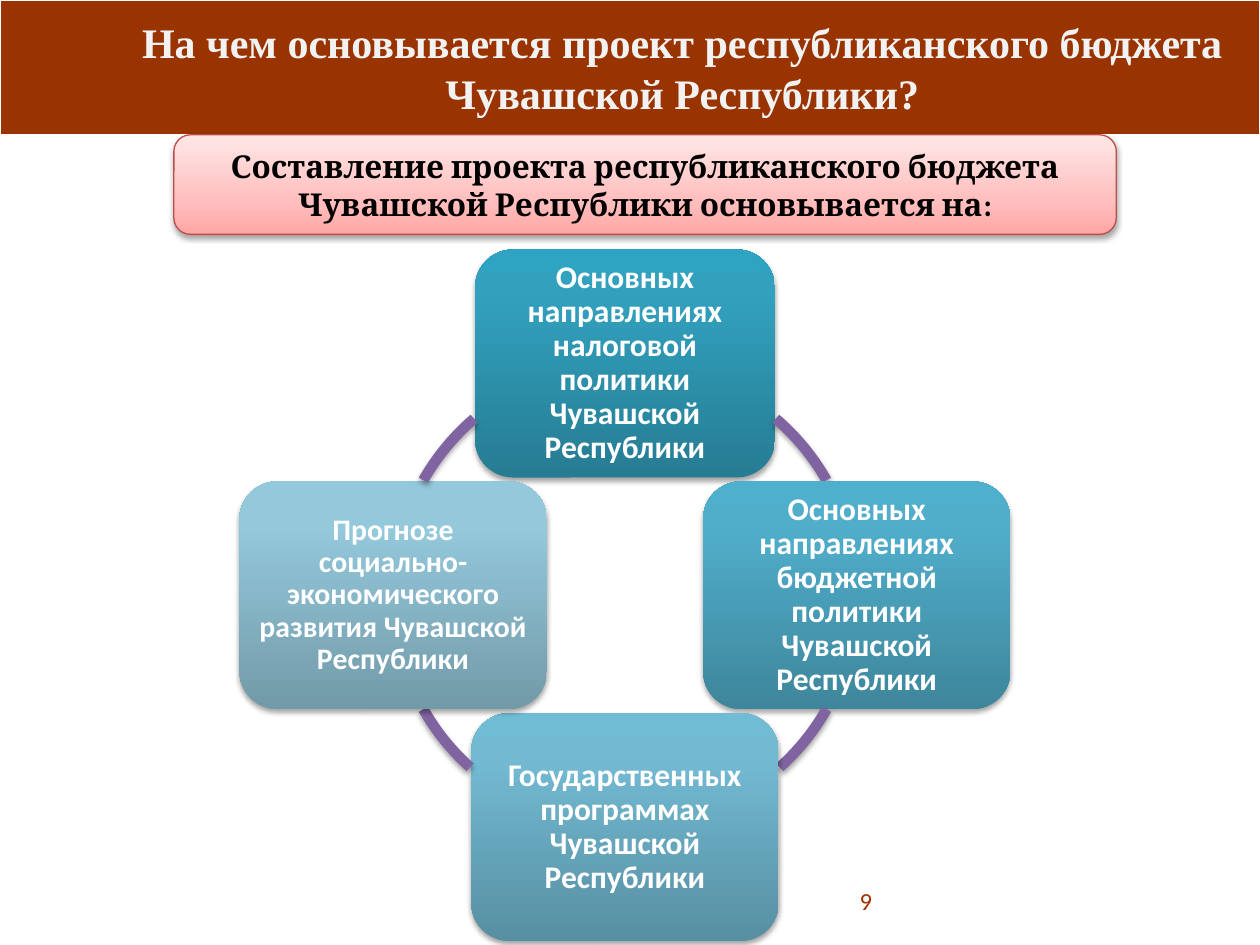
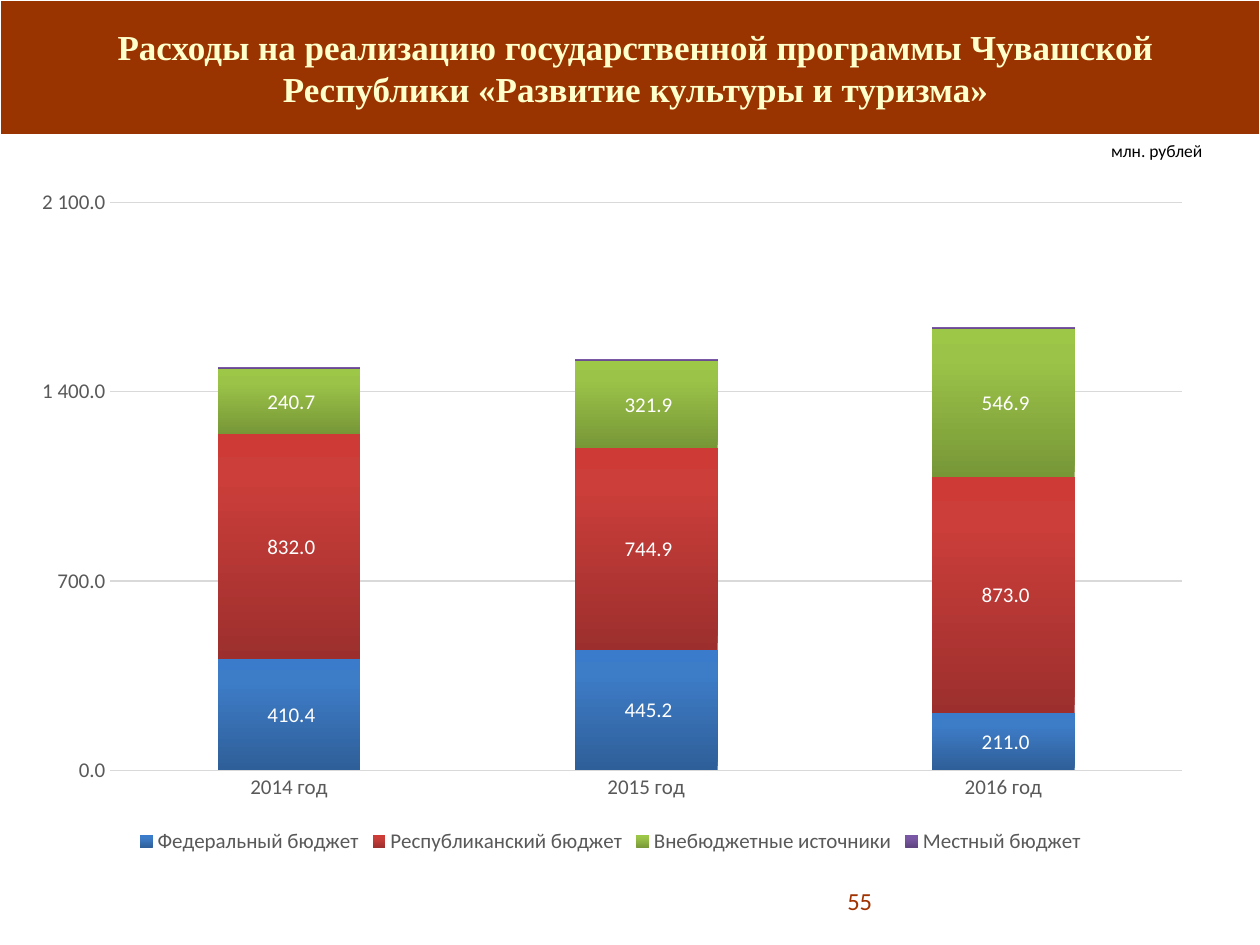
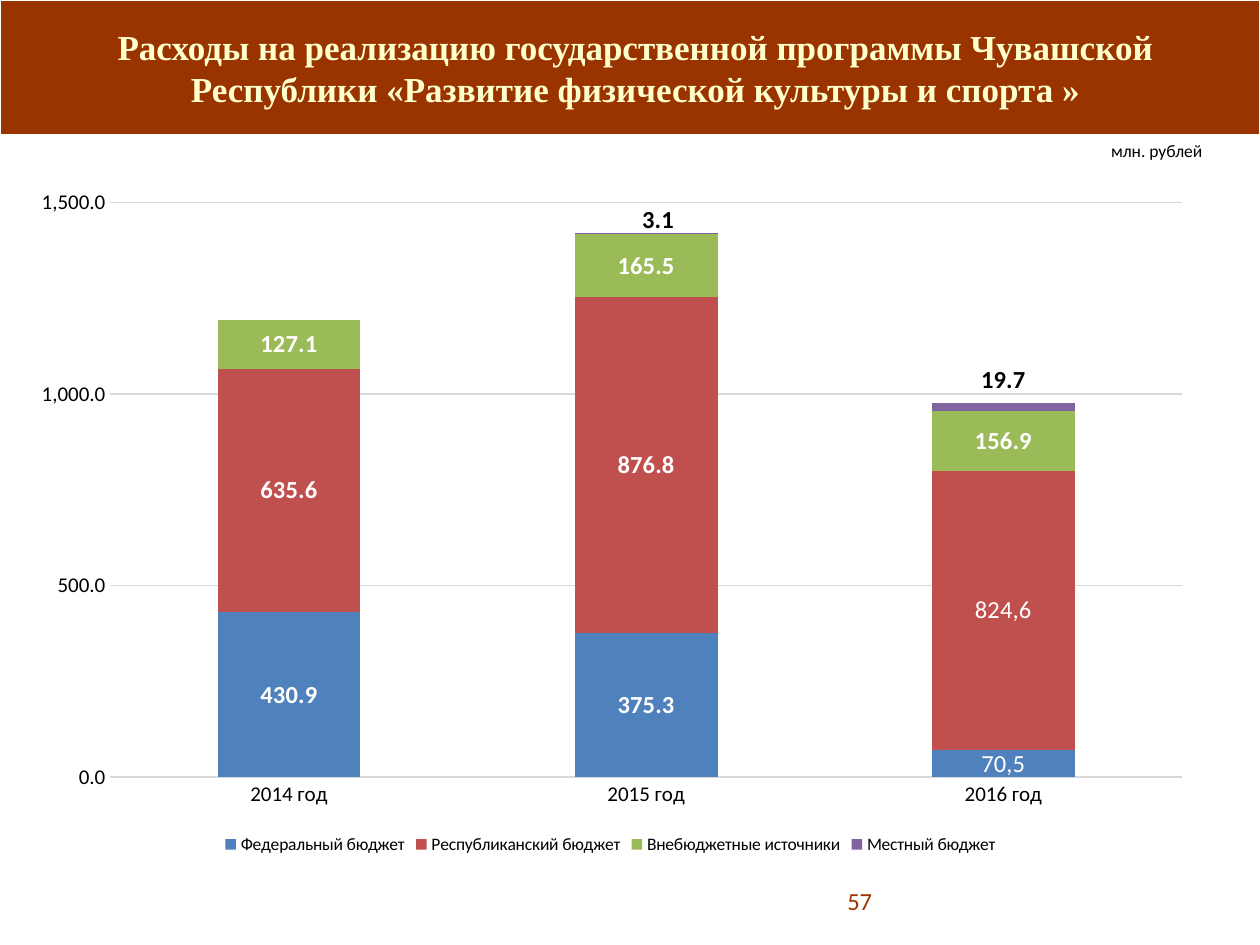
"""Builds three budget slides: a cycle of four foundations and two stacked spending charts."""
from copy import deepcopy

from pptx import Presentation
from pptx.chart.data import CategoryChartData
from pptx.dml.color import RGBColor
from pptx.enum.chart import XL_CHART_TYPE, XL_LEGEND_POSITION, XL_TICK_MARK
from pptx.enum.shapes import MSO_SHAPE
from pptx.enum.text import MSO_ANCHOR, PP_ALIGN
from pptx.oxml import parse_xml
from pptx.oxml.ns import nsdecls, qn
from pptx.util import Pt

PX = 9144
COLORS = {
    "band": "993300", "white": "FFFFFF", "black": "000000", "page": "A03202",
    "title_light": "F2F2F2", "title_cream": "FFFFCC", "arc": "8064A2",
    "banner_line": "BF4C48", "grid": "D9D9D9", "gray": "595959",
}
BANNER_STOPS = [(0, "FFA6A5"), (0.35, "FFC0BF"), (1, "FFE7E7")]
PLOT_LAYOUT = (
    "<c:layout %s><c:manualLayout><c:layoutTarget val='inner'/>"
    "<c:xMode val='edge'/><c:yMode val='edge'/><c:x val='0.08'/><c:y val='0.04'/>"
    "<c:w val='0.9'/><c:h val='{height}'/></c:manualLayout></c:layout>" % nsdecls("c")
)
LABEL_LAYOUT = (
    "<c:layout %s><c:manualLayout><c:x val='{x}'/><c:y val='{y}'/>"
    "</c:manualLayout></c:layout>" % nsdecls("c")
)
SHADOW = (
    "<a:outerShdw %s blurRad='39370' dist='22860' dir='5400000' rotWithShape='0'>"
    "<a:srgbClr val='000000'><a:alpha val='35000'/></a:srgbClr></a:outerShdw>" % nsdecls("a")
)


def write_text(frame, text, size=18, color="white", font="Calibri", bold=False,
               align=PP_ALIGN.CENTER, anchor=MSO_ANCHOR.MIDDLE, margins=(10, 5), spacing=1.0):
    frame.word_wrap = True
    frame.vertical_anchor = anchor
    frame.margin_left = frame.margin_right = margins[0] * PX
    frame.margin_top = frame.margin_bottom = margins[1] * PX
    paragraph = frame.paragraphs[0]
    paragraph.alignment = align
    paragraph.line_spacing = spacing
    run = paragraph.add_run()
    run.text = text
    run.font.size = Pt(size)
    run.font.name = font
    run.font.bold = bold
    run.font.color.rgb = RGBColor.from_string(COLORS[color])


def set_gradient(fill, element, stops):
    fill.gradient()
    fill.gradient_angle = 90
    stop_list = element.find(".//" + qn("a:gsLst"))
    stop_list.append(deepcopy(stop_list[-1]))
    for stop, (position, color) in zip(fill.gradient_stops, stops):
        stop.position = position
        stop.color.rgb = RGBColor.from_string(color)


presentation = Presentation()
presentation.slide_width = 1000 * PX
presentation.slide_height = 750 * PX

pages = [
    ("На чем основывается проект республиканского бюджета Чувашской Республики?",
     917, 24, "title_light", "9"),
    ("Расходы на реализацию государственной программы Чувашской Республики "
     "«Развитие культуры и туризма»", 843, 20, "title_cream", "55"),
    ("Расходы на реализацию государственной программы Чувашской Республики "
     "«Развитие физической культуры и спорта »", 843, 20, "title_cream", "57"),
]
slides = []
for title, width, size, color, number in pages:
    slide = presentation.slides.add_slide(presentation.slide_layouts[6])
    slides.append(slide)
    band = slide.shapes.add_shape(MSO_SHAPE.RECTANGLE, 0, 0, 1000 * PX, 107 * PX)
    band.shadow.inherit = False
    band.fill.solid()
    band.fill.fore_color.rgb = RGBColor.from_string(COLORS["band"])
    band.line.color.rgb = RGBColor.from_string(COLORS["white"])
    band.line.width = Pt(0.75)
    title_box = slide.shapes.add_textbox(83 * PX, 0, width * PX, 107 * PX)
    write_text(title_box.text_frame, title, size=size, color=color,
               font="Times New Roman", bold=True)
    number_box = slide.shapes.add_textbox(587 * PX, 695 * PX, 115 * PX, 40 * PX)
    write_text(number_box.text_frame, number, size=14, color="page", align=PP_ALIGN.RIGHT)

shapes = slides[0].shapes
center_x, center_y, radius, card_height = 496, 472, 184, 181
foundations = [
    ("Основных направлениях налоговой политики Чувашской Республики", 18, 0, -1, 238,
     ("267C93", "32A1BE", "2FA3C2"), (310.6, 330.4)),
    ("Основных направлениях бюджетной политики Чувашской Республики", 18, 1, 0, 244,
     ("3E869C", "50AECA", "4EB0CD"), (29.6, 48.1)),
    ("Государственных программах Чувашской Республики", 18, 0, 1, 244,
     ("588FA2", "72BAD2", "71BCD5"), (131.9, 150.4)),
    ("Прогнозе социально-экономического развития Чувашской Республики", 17, -1, 0, 244,
     ("729AA8", "94C8DB", "93C9DD"), (209.6, 229.4)),
]
shadowed = []
for text, size, step_x, step_y, width, card_colors, angles in foundations:
    left = center_x + step_x * radius - width // 2
    top = center_y + step_y * radius - card_height // 2
    card = shapes.add_shape(MSO_SHAPE.ROUNDED_RECTANGLE,
                            left * PX, top * PX, width * PX, card_height * PX)
    set_gradient(card.fill, card._element, list(zip((0, 0.8, 1), card_colors)))
    card.line.fill.background()
    write_text(card.text_frame, text, size=size, bold=True, margins=(7, 7), spacing=0.9)
    arc = shapes.add_shape(MSO_SHAPE.ARC, (center_x - radius) * PX, (center_y - radius) * PX,
                           2 * radius * PX, 2 * radius * PX)
    for index, angle in enumerate(angles):
        arc.adjustments[index] = angle * 0.6
    arc.fill.background()
    arc.line.color.rgb = RGBColor.from_string(COLORS["arc"])
    arc.line.width = Pt(6)
    shadowed += [card, arc]

banner = shapes.add_shape(MSO_SHAPE.ROUNDED_RECTANGLE, 138 * PX, 107 * PX, 748 * PX, 79 * PX)
set_gradient(banner.fill, banner._element, BANNER_STOPS)
banner.line.color.rgb = RGBColor.from_string(COLORS["banner_line"])
banner.line.width = Pt(0.75)
write_text(banner.text_frame,
           "Составление проекта республиканского бюджета Чувашской Республики основывается на:",
           color="black", font="Cambria", bold=True, margins=(0, 0))
for shape in shadowed + [banner]:
    shape.shadow.inherit = False
    shape._element.spPr.find(qn("a:effectLst")).append(parse_xml(SHADOW))

source_names = ["Федеральный бюджет", "Республиканский бюджет",
                "Внебюджетные источники", "Местный бюджет"]
charts = [
    {"slide": slides[1], "maximum": 2100, "major": 700, "format": r"#\ ##0.0",
     "axis_color": "gray", "legend_size": 12, "label_size": 12, "bold": False, "height": 0.83,
     "values": [(410.4, 445.2, 211), (832, 744.9, 873), (240.7, 321.9, 546.9), (10, 10, 10)],
     "fills": [("2F5F99", "3D7CC7", "3A7CCB"), ("9C2F2D", "CB3E3A", "CE3B37"),
               ("779737", "9BC348", "9DC746"), ("5F4480", "7B58A6", "7C57A8")],
     "custom_labels": {}, "raised_labels": {}},
    {"slide": slides[2], "maximum": 1500, "major": 500, "format": "#,##0.0",
     "axis_color": "black", "legend_size": 10, "label_size": 14, "bold": True, "height": 0.84,
     "values": [(430.9, 375.3, 70.5), (635.6, 876.8, 729), (127.1, 165.5, 156.9),
                (None, 3.1, 19.7)],
     "fills": [("4F81BD",), ("C0504D",), ("9BBB59",), ("8064A2",)],
     "custom_labels": {0: "70,5", 1: "824,6"},
     "raised_labels": {1: (0.01, -0.02), 2: (0, -0.04)}},
]
for settings in charts:
    slide = settings["slide"]
    unit_box = slide.shapes.add_textbox(872 * PX, 106 * PX, 94 * PX, 27 * PX)
    write_text(unit_box.text_frame, "млн. рублей", size=10, color="black",
               align=PP_ALIGN.LEFT, anchor=MSO_ANCHOR.TOP)

    chart_data = CategoryChartData(number_format=settings["format"])
    chart_data.categories = ["2014 год", "2015 год", "2016 год"]
    for name, values in zip(source_names, settings["values"]):
        chart_data.add_series(name, values)
    chart = slide.shapes.add_chart(XL_CHART_TYPE.COLUMN_STACKED, 12 * PX, 139 * PX,
                                   945 * PX, 543 * PX, chart_data).chart
    axis_color = RGBColor.from_string(COLORS[settings["axis_color"]])
    grid_color = RGBColor.from_string(COLORS["grid"])
    chart.has_title = False
    chart.font.name = "Calibri"
    chart.font.size = Pt(10)
    chart.has_legend = True
    chart.legend.position = XL_LEGEND_POSITION.BOTTOM
    chart.legend.include_in_layout = False
    chart.legend.font.size = Pt(settings["legend_size"])
    chart.legend.font.color.rgb = axis_color

    plot_area = chart._chartSpace.chart.plotArea
    for layout in plot_area.findall(qn("c:layout")):
        plot_area.remove(layout)
    plot_area.insert(0, parse_xml(PLOT_LAYOUT.format(height=settings["height"])))

    for axis in (chart.category_axis, chart.value_axis):
        axis.major_tick_mark = axis.minor_tick_mark = XL_TICK_MARK.NONE
        axis.tick_labels.font.size = Pt(12)
        axis.tick_labels.font.color.rgb = axis_color
    chart.category_axis.format.line.color.rgb = grid_color
    chart.category_axis.format.line.width = Pt(0.75)
    value_axis = chart.value_axis
    value_axis.format.line.fill.background()
    value_axis.minimum_scale = 0
    value_axis.maximum_scale = settings["maximum"]
    value_axis.major_unit = settings["major"]
    value_axis.tick_labels.number_format = settings["format"]
    value_axis.tick_labels.number_format_is_linked = False
    value_axis.major_gridlines.format.line.color.rgb = grid_color
    value_axis.major_gridlines.format.line.width = Pt(0.75)

    plot = chart.plots[0]
    plot.gap_width = 150
    plot.overlap = 100
    plot.vary_by_categories = False
    for index, (series, colors) in enumerate(zip(plot.series, settings["fills"])):
        series.invert_if_negative = False
        fill = series.format.fill
        if len(colors) == 1:
            fill.solid()
            fill.fore_color.rgb = RGBColor.from_string(colors[0])
        else:
            set_gradient(fill, series._element, list(zip((0, 0.8, 1), colors)))
        if index < 3:
            labels = series.data_labels
            labels.show_value = True
            labels.number_format = settings["format"]
            labels.number_format_is_linked = False
            labels.font.size = Pt(settings["label_size"])
            labels.font.bold = settings["bold"]
            labels.font.color.rgb = RGBColor.from_string(COLORS["white"])
        if index in settings["custom_labels"]:
            write_text(series.points[2].data_label.text_frame,
                       settings["custom_labels"][index], size=14)
    for point, (x, y) in settings["raised_labels"].items():
        font = series.points[point].data_label.font
        font.size = Pt(14)
        font.bold = True
        font.color.rgb = RGBColor.from_string(COLORS["black"])
        label = series._element.findall(".//" + qn("c:dLbl"))[-1]
        label.insert(1, parse_xml(LABEL_LAYOUT.format(x=x, y=y)))

presentation.save("out.pptx")
